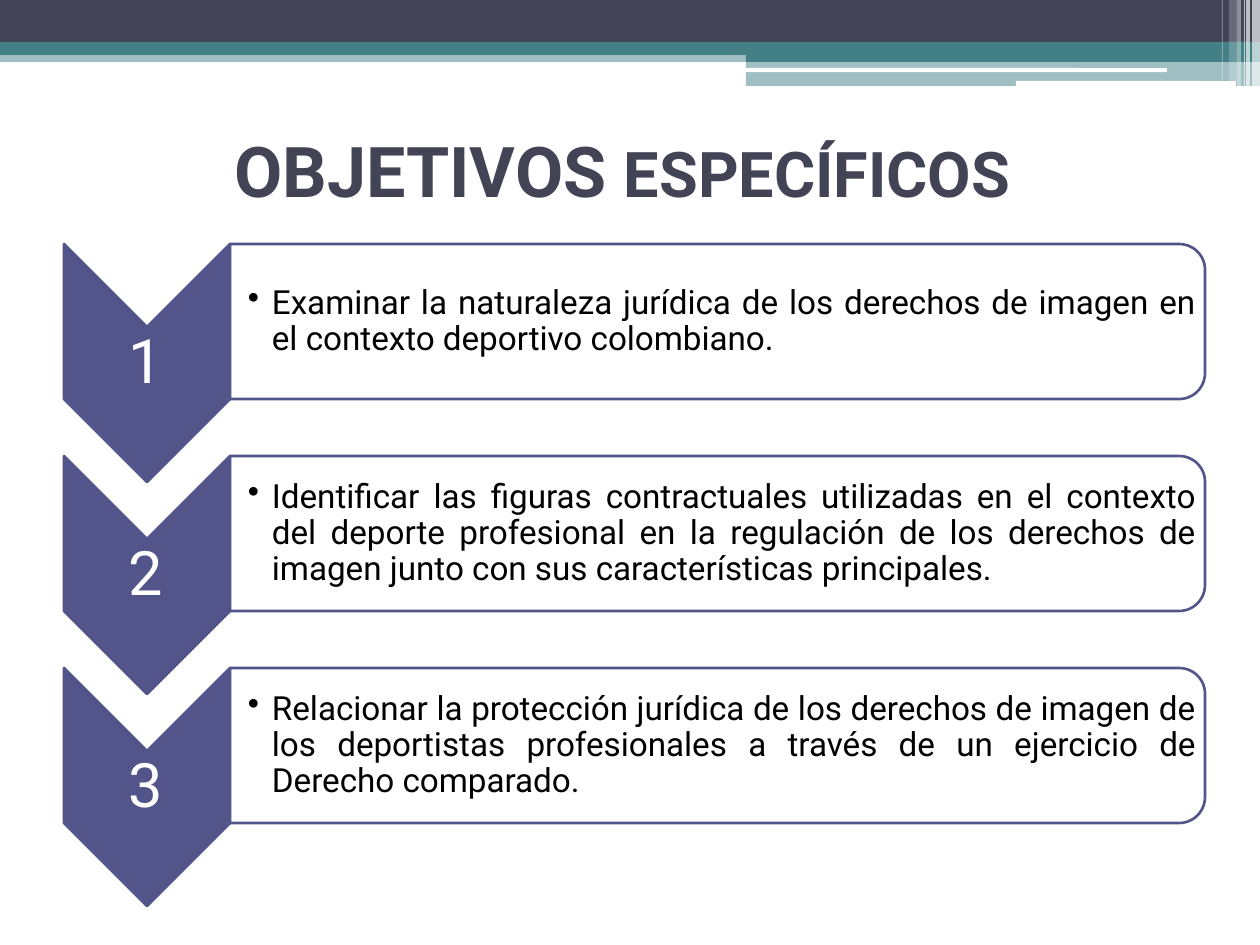
from dataclasses import dataclass

from lxml.etree import SubElement
from pptx import Presentation
from pptx.dml.color import RGBColor
from pptx.enum.shapes import MSO_SHAPE as Shape
from pptx.enum.text import MSO_ANCHOR as Anchor, PP_ALIGN as Align
from pptx.oxml.ns import qn
from pptx.util import Emu, Pt


def px(n):
    """Turn pixels at 126 to the inch into EMU."""
    return Emu(round(n * 914400 / 126))


@dataclass(frozen=True)
class Theme:
    """Colours, font and type sizes."""
    font: str = "Roboto"
    dark: str = "424456"
    teal: str = "438086"
    violet: str = "53548A"
    white: str = "FFFFFF"
    black: str = "000000"
    title: int = 40
    title_small: int = 36
    number: int = 35
    body: int = 19
    line: float = 1.5


class Deck:
    """Draws styled elements on the current slide."""

    def __init__(self, prs, theme):
        self.theme = theme
        self.s = prs.slides.add_slide(prs.slide_layouts[5])

    def style(self, r, size, color, bold=False):
        """Format one run."""
        r.font.name = self.theme.font
        r.font.size = Pt(size)
        r.font.bold = bold
        r.font.color.rgb = RGBColor.from_string(color)

    def title(self, box, parts):
        """Place the title and fill it with sized runs."""
        sp = self.s.shapes.title
        sp.left, sp.top, sp.width, sp.height = map(px, box)
        tf = sp.text_frame
        tf.vertical_anchor = Anchor.MIDDLE
        p = tf.paragraphs[0]
        p.alignment = Align.CENTER
        for text, size in parts:
            r = p.add_run()
            r.text = text
            self.style(r, size, self.theme.dark, bold=True)

    def shape(self, kind, box, color, alpha=100, line=None):
        """Add a filled preset shape."""
        sp = self.s.shapes.add_shape(kind, *map(px, box))
        sp.shadow.inherit = False
        sp.fill.solid()
        sp.fill.fore_color.rgb = RGBColor.from_string(color)
        if alpha < 100:
            clr = sp.fill._xPr.find(qn("a:solidFill")).find(qn("a:srgbClr"))
            SubElement(clr, qn("a:alpha"), val=str(alpha * 1000))
        if line:
            sp.line.color.rgb = RGBColor.from_string(line)
            sp.line.width = Pt(self.theme.line)
        else:
            sp.line.fill.background()
        return sp

    def turned(self, kind, box, color, alpha=100):
        """Add an outlined shape that covers the box after a quarter turn."""
        x, y, w, h = box
        unturned = (x + (w - h) / 2, y + (h - w) / 2, h, w)
        sp = self.shape(kind, unturned, color, alpha, self.theme.violet)
        sp.rotation = 90

    def text(self, box, text, size, color, align, insets):
        """Add a wrapped, vertically centred text box."""
        tf = self.s.shapes.add_textbox(*map(px, box)).text_frame
        tf.word_wrap = True
        tf.vertical_anchor = Anchor.MIDDLE
        tf.margin_left, tf.margin_top, tf.margin_right, tf.margin_bottom = map(px, insets)
        tf.text = text
        p = tf.paragraphs[0]
        p.alignment = align
        p.line_spacing = 0.9
        self.style(p.runs[0], size, color)
        return p

    def bullet(self, p, indent):
        """Give a paragraph a hanging bullet."""
        pPr = p._p.get_or_add_pPr()
        pPr.set("marL", str(px(indent)))
        pPr.set("indent", str(-px(indent)))
        SubElement(pPr, qn("a:buChar"), char="•")

    def objective(self, y, number, text):
        """Add a numbered chevron with its text panel."""
        t = self.theme
        self.turned(Shape.CHEVRON, (64, y, 166, 238), t.violet)
        self.text((63, y + 84, 166, 72), str(number), t.number, t.white,
                  Align.CENTER, (2, 2, 2, 2))
        self.turned(Shape.ROUND_2_SAME_RECTANGLE, (230, y, 975, 155), t.white, 90)
        p = self.text((229, y + 8, 968, 140), text, t.body, t.black,
                      Align.JUSTIFY, (19, 1, 1, 1))
        self.bullet(p, 24)


BANDS = [
    ((0, 50, 1260, 12), "teal", 50),
    ((0, 0, 1260, 43), "dark", 100),
    ((0, 42, 1260, 13), "teal", 100),
    ((746, 49, 514, 13), "teal", 100),
    ((746, 61, 514, 25), "teal", 50),
]
GROOVES = [(745, 68, 422, 4), (1016, 81, 220, 5)]
STRIPES = [
    (1252, 8, 86, 65), (1246, 4, 86, 65), (1244, 1, 86, 60),
    (1237, 4, 86, 40), (1229, 8, 81, 20), (1222, 1, 81, 30),
]
OBJECTIVES = [
    "Examinar la naturaleza jurídica de los derechos de imagen en el contexto "
    "deportivo colombiano.",
    "Identificar las figuras contractuales utilizadas en el contexto del deporte "
    "profesional en la regulación de los derechos de imagen junto con sus "
    "características principales.",
    "Relacionar la protección jurídica de los derechos de imagen de los deportistas "
    "profesionales a través de un ejercicio de Derecho comparado.",
]


def main():
    """Build the slide and save it."""
    prs = Presentation()
    prs.slide_width, prs.slide_height = px(1260), px(945)
    t = Theme()
    deck = Deck(prs, t)
    for box, name, alpha in BANDS:
        deck.shape(Shape.RECTANGLE, box, getattr(t, name), alpha)
    for box in GROOVES:
        deck.shape(Shape.ROUNDED_RECTANGLE, box, t.white)
    for x, w, h, alpha in STRIPES:
        deck.shape(Shape.RECTANGLE, (x, 0, w, h), t.white, alpha)
    deck.title((64, 96, 1134, 147),
               [("OBJETIVOS ", t.title), ("ESPECÍFICOS", t.title_small), (" ", t.title)])
    for i, text in enumerate(OBJECTIVES):
        deck.objective(244 + 212 * i, i + 1, text)
    prs.save("out.pptx")


if __name__ == "__main__":
    main()
